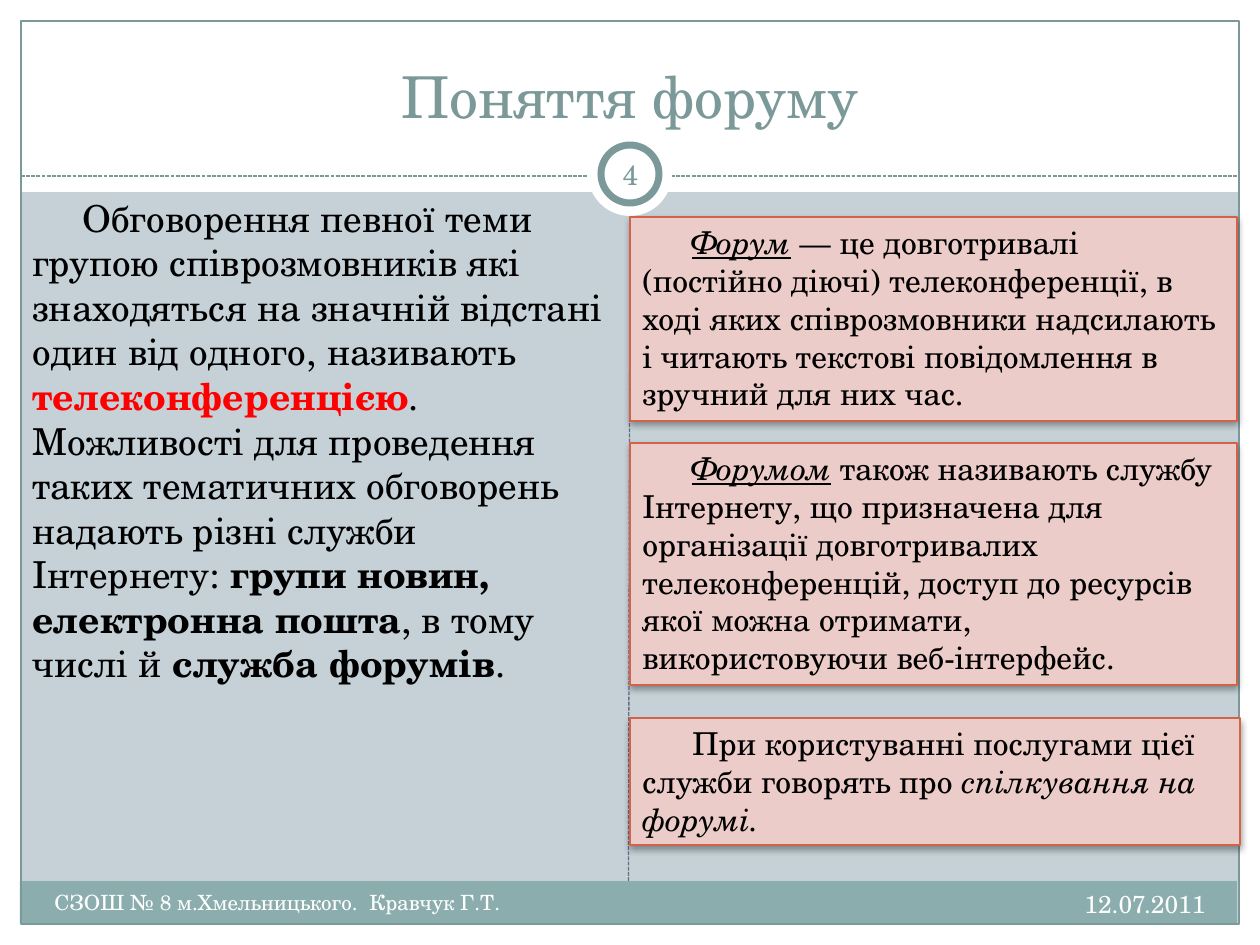
from lxml import etree
from pptx import Presentation
from pptx.dml.color import RGBColor
from pptx.enum.dml import MSO_LINE
from pptx.enum.shapes import MSO_CONNECTOR, MSO_SHAPE
from pptx.enum.text import MSO_ANCHOR, MSO_AUTO_SIZE, PP_ALIGN
from pptx.oxml import parse_xml
from pptx.oxml.ns import nsdecls, qn
from pptx.util import Emu, Pt

RECTANGLE, OVAL = MSO_SHAPE.RECTANGLE, MSO_SHAPE.OVAL
STRAIGHT, DASH = MSO_CONNECTOR.STRAIGHT, MSO_LINE.SQUARE_DOT
LEFT, CENTER, RIGHT = PP_ALIGN.LEFT, PP_ALIGN.CENTER, PP_ALIGN.RIGHT
TOP, MIDDLE, BOTTOM = MSO_ANCHOR.TOP, MSO_ANCHOR.MIDDLE, MSO_ANCHOR.BOTTOM
GROW = MSO_AUTO_SIZE.SHAPE_TO_FIT_TEXT

FONT = "TeX Gyre Schola"
WHITE = RGBColor(0xFF, 0xFF, 0xFF)
BLACK = RGBColor(0x00, 0x00, 0x00)
RED = RGBColor(0xFF, 0x00, 0x00)
BACKGROUND = RGBColor(0xC5, 0xD1, 0xD7)
TEAL = RGBColor(0x7C, 0x99, 0x9A)
BAR = RGBColor(0x8C, 0xAD, 0xAE)
SLATE = RGBColor(0x64, 0x6B, 0x86)
PINK = RGBColor(0xEC, 0xCC, 0xC9)
ORANGE = RGBColor(0xD1, 0x63, 0x49)

BOLD = {"bold": True}
TERM = {"italic": True, "underline": True}

TITLE = "Поняття форуму"
DATE = "12.07.2011"
AUTHOR = "СЗОШ № 8 м.Хмельницького.  Кравчук Г.Т."
NUMBER = "4"
BODY = [
    ("Обговорення певної теми групою співрозмовників які знаходяться "
     "на значній відстані один від одного, називають ", {}),
    ("телеконференцією", {"bold": True, "color": RED}),
    (". Можливості для проведення таких тематичних обговорень надають "
     "різні служби Інтернету: ", {}),
    ("групи новин, електронна пошта", BOLD),
    (", в тому числі й ", {}),
    ("служба форумів", BOLD),
    (".", {}),
]
CARDS = [
    ((630, 217, 607, 204), [
        ("Форум", TERM),
        (" — це довготривалі (постійно діючі) телеконференції, в ході яких "
         "співрозмовники надсилають і читають текстові повідомлення в "
         "зручний для них час.", {}),
    ]),
    ((630, 443, 607, 242), [
        ("Форумом", TERM),
        (" також називають службу Інтернету, що призначена для організації "
         "довготривалих телеконференцій, доступ до ресурсів якої можна "
         "отримати, використовуючи веб-інтерфейс.", {}),
    ]),
    ((630, 718, 610, 127), [
        ("При користуванні послугами цієї служби говорять про ", {}),
        ("спілкування на форумі.", {"italic": True}),
    ]),
]

WIDTH, HEIGHT, MARGIN = 1260, 945, 21
HEADER_HEIGHT = 192
BORDERS = [
    (0, HEIGHT - MARGIN, WIDTH, MARGIN),
    (0, 0, WIDTH, HEADER_HEIGHT),
    (0, 0, MARGIN, HEIGHT),
    (WIDTH - MARGIN, 0, MARGIN, HEIGHT),
]
BADGE_CENTER = (WIDTH // 2, 174)
INDENT = 50


def px(value):
    return Emu(round(value * 914400 / 126))


def add_block(slide, kind, area, fill=None, line=None, weight=0.75):
    block = slide.shapes.add_shape(kind, *map(px, area))
    block.shadow.inherit = False
    if fill is None:
        block.fill.background()
    else:
        block.fill.solid()
        block.fill.fore_color.rgb = fill
    if line is None:
        block.line.fill.background()
    else:
        block.line.color.rgb = line
        block.line.width = Pt(weight)
    return block


def add_circle(slide, diameter, **style):
    left, top = (center - diameter / 2 for center in BADGE_CENTER)
    return add_block(slide, OVAL, (left, top, diameter, diameter), **style)


def add_dashes(slide, start, end, color):
    dashes = slide.shapes.add_connector(STRAIGHT, *map(px, start + end))
    dashes.line.color.rgb = color
    dashes.line.width = Pt(0.75)
    dashes.line.dash_style = DASH
    etree.SubElement(dashes._element.spPr, qn("a:effectLst"))
    return dashes


def add_shadow(block):
    effects = block._element.spPr.find(qn("a:effectLst"))
    effects.append(parse_xml(
        f'<a:outerShdw {nsdecls("a")} blurRad="{Pt(4)}" dist="{Pt(2)}" '
        'dir="5400000" rotWithShape="0"><a:srgbClr val="000000">'
        '<a:alpha val="35000"/></a:srgbClr></a:outerShdw>'))


def write(box, spans, size, color=BLACK, align=LEFT, anchor=TOP, indent=0, inset=None):
    frame = box.text_frame
    frame.word_wrap = True
    frame.vertical_anchor = anchor
    if inset is not None:
        frame.margin_left = frame.margin_right = px(inset)
        frame.margin_top = frame.margin_bottom = px(inset)
    para = frame.paragraphs[0]
    para.alignment = align
    if indent:
        properties = para._p.get_or_add_pPr()
        properties.set("marL", "0")
        properties.set("indent", str(px(indent)))
    for text, style in spans:
        span = para.add_run()
        span.text = text
        span.font.name = FONT
        span.font.size = Pt(size)
        span.font.color.rgb = style.get("color", color)
        span.font.bold = style.get("bold", False)
        span.font.italic = style.get("italic", False)
        span.font.underline = style.get("underline", False)


def add_text(slide, area, spans, size, **style):
    write(slide.shapes.add_textbox(*map(px, area)), spans, size, **style)


def main():
    deck = Presentation()
    deck.slide_width, deck.slide_height = px(WIDTH), px(HEIGHT)
    slide = deck.slides.add_slide(deck.slide_layouts[6])
    slide.background.fill.solid()
    slide.background.fill.fore_color.rgb = BACKGROUND

    for area in BORDERS:
        add_block(slide, RECTANGLE, area, fill=WHITE)
    footer = add_block(slide, RECTANGLE, (20, 881, 1217, 43), fill=BAR)
    frame_area = (MARGIN, MARGIN, WIDTH - 2 * MARGIN, HEIGHT - 2 * MARGIN)
    add_block(slide, RECTANGLE, frame_area, line=TEAL)
    add_dashes(slide, (MARGIN, 176), (WIDTH - MARGIN, 176), TEAL)
    add_circle(slide, 84, fill=WHITE)
    add_circle(slide, 58, fill=WHITE, line=TEAL, weight=4)
    divider = add_dashes(slide, (629, 881), (630, 217), SLATE)
    divider.begin_connect(footer, 0)

    add_text(slide, (42, 31, 1176, 105), [(TITLE, {})], 33,
             color=TEAL, align=CENTER, anchor=BOTTOM)
    add_text(slide, (798, 883, 420, 50), [(DATE, {})], 14, color=WHITE, align=RIGHT)
    add_text(slide, (42, 883, 494, 50), [(AUTHOR, {})], 12, color=WHITE)
    add_text(slide, (599, 144, 63, 60), [(NUMBER, {})], 16,
             color=TEAL, align=CENTER, anchor=MIDDLE, inset=6)
    add_text(slide, (20, 189, 601, 461), BODY, 21.2, indent=INDENT)

    for area, spans in CARDS:
        card = add_block(slide, RECTANGLE, area, fill=PINK, line=ORANGE)
        add_shadow(card)
        write(card, spans, 18, indent=INDENT)
        card.text_frame.auto_size = GROW

    deck.save("out.pptx")


if __name__ == "__main__":
    main()
